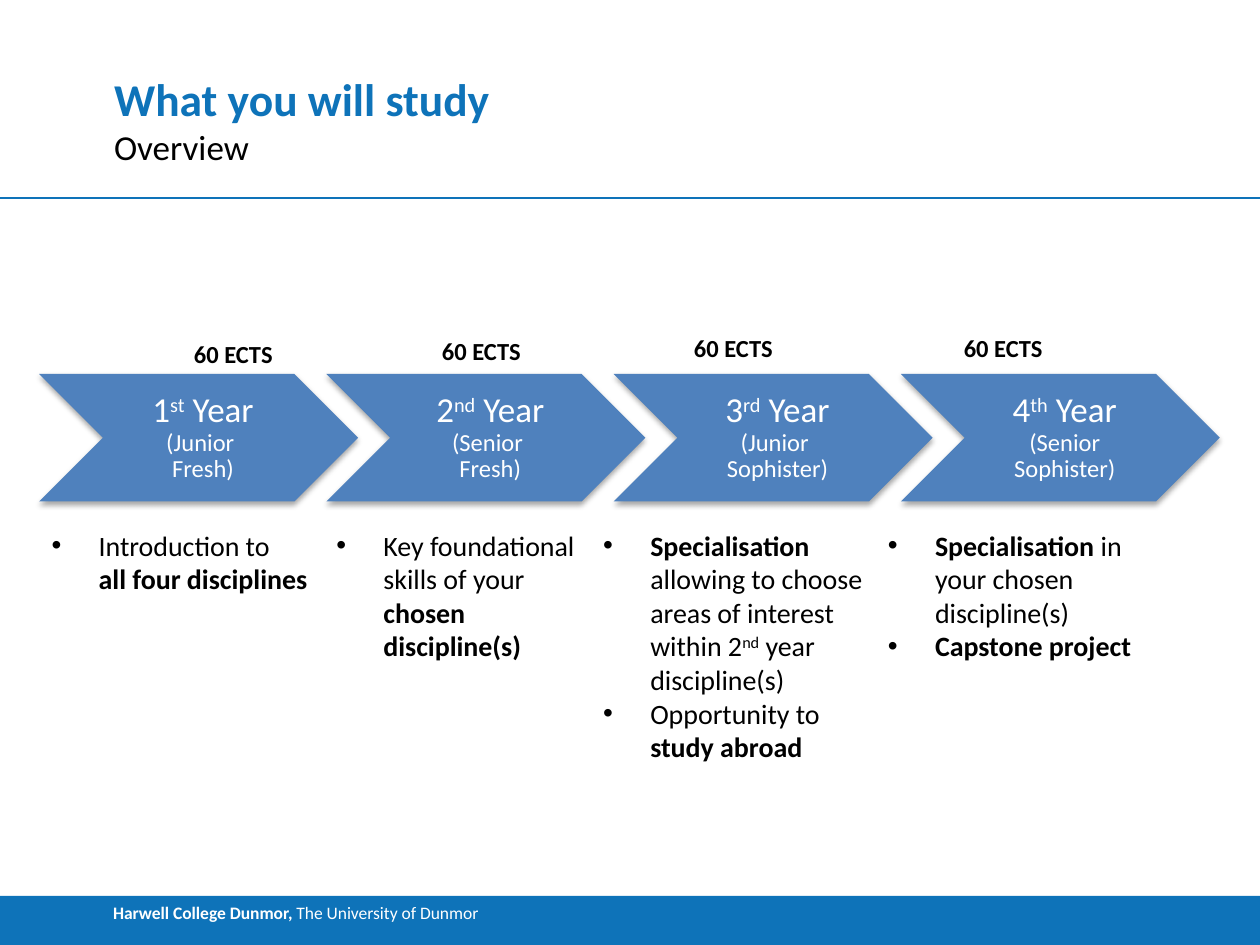
from copy import deepcopy
from lxml import etree
from pptx import Presentation
from pptx.dml.color import RGBColor
from pptx.enum.shapes import MSO_CONNECTOR, MSO_SHAPE
from pptx.enum.text import MSO_ANCHOR, PP_ALIGN
from pptx.oxml.ns import qn
from pptx.util import Cm, Pt

BLUE = RGBColor(0x0E, 0x73, 0xB9)
STEEL = RGBColor(0x4F, 0x81, 0xBD)
WHITE = RGBColor(0xFF, 0xFF, 0xFF)
BLACK = RGBColor(0, 0, 0)
RECT, CHEVRON = MSO_SHAPE.RECTANGLE, MSO_SHAPE.CHEVRON
STRAIGHT = MSO_CONNECTOR.STRAIGHT
TOP, MIDDLE, BOTTOM = MSO_ANCHOR.TOP, MSO_ANCHOR.MIDDLE, MSO_ANCHOR.BOTTOM
LEFT, CENTER = PP_ALIGN.LEFT, PP_ALIGN.CENTER

deck = Presentation()
deck.slide_width, deck.slide_height = Cm(25.4), Cm(19.05)
slide = deck.slides.add_slide(deck.slide_layouts[6])
shapes = slide.shapes


def add_box(left, top, width, height, anchor=TOP, pads=(0, 0, 0, 0)):
    """Add a wrapping text box, pads in cm: left, top, right, bottom."""
    frame = shapes.add_textbox(Cm(left), Cm(top), Cm(width), Cm(height)).text_frame
    frame.word_wrap = True
    frame.vertical_anchor = anchor
    frame.margin_left, frame.margin_top, frame.margin_right, frame.margin_bottom = map(Cm, pads)
    return frame


def write(para, parts, color=BLACK):
    """Write (text, size, style) parts; style b is bold, ^ raised, / ends the line."""
    for text, size, style in parts:
        run = para.add_run()
        run.text = text
        font = run.font
        font.name, font.size, font.bold = "Calibri", Pt(size), "b" in style
        font.color.rgb = color
        if "^" in style:
            font._element.set("baseline", "30000")
        if "/" in style:
            para._p.add_br().append(deepcopy(font._element))


# Footer band
band = shapes.add_shape(RECT, 0, Cm(18.06), Cm(25.4), Cm(0.99))
band.shadow.inherit = False
band.fill.solid()
band.fill.fore_color.rgb = BLUE
band.line.fill.background()
band.text_frame.vertical_anchor = TOP
band.text_frame.margin_left = Cm(2.28)
para = band.text_frame.paragraphs[0]
para.alignment = LEFT
write(para, [("Harwell College Dunmor, ", 10, "b"), ("The University of Dunmor", 10, "")], WHITE)

# Header
rule = shapes.add_connector(STRAIGHT, 0, Cm(3.99), Cm(25.4), Cm(3.99))
rule.line.color.rgb = BLUE
rule.line.width = Pt(0.75)
etree.SubElement(rule._element.spPr, qn("a:effectLst"))
write(add_box(2.3, 1, 20.83, 1.54, BOTTOM).paragraphs[0], [("What you will study", 26, "b")], BLUE)
write(add_box(2.3, 2.54, 20.83, 0.76).paragraphs[0], [("Overview", 20, "")])

# Year chevrons
YEARS = [
    ("1", "st", [("(Junior ", 14, "/"), ("Fresh)", 14, "")]),
    ("2", "nd", [("(Senior ", 14, "/"), ("Fresh)", 14, "")]),
    ("3", "rd", [("(Junior ", 14, "/"), ("Sophister)", 14, "")]),
    ("4", "th", [("(Senior Sophister)", 14, "")]),
]
for i, (num, suffix, stage) in enumerate(YEARS):
    left = 0.79 + 5.79 * i
    arrow = shapes.add_shape(CHEVRON, Cm(left), Cm(7.54), Cm(6.43), Cm(2.57))
    arrow.fill.solid()
    arrow.fill.fore_color.rgb = STEEL
    arrow.line.fill.background()
    arrow.shadow.inherit = False
    effects = arrow._element.spPr.find(qn("a:effectLst"))
    shade = etree.SubElement(effects, qn("a:outerShdw"), blurRad="40000", dist="23000",
                             dir="5400000", rotWithShape="0")
    tint = etree.SubElement(shade, qn("a:srgbClr"), val="000000")
    etree.SubElement(tint, qn("a:alpha"), val="35000")

    frame = add_box(left + 1.3, 7.54, 3.86, 2.57, MIDDLE, (0.23, 0.08, 0.08, 0.08))
    para = frame.paragraphs[0]
    para.alignment, para.line_spacing = CENTER, 0.9
    write(para, [(num, 20, ""), (suffix, 20, "^"), (" Year", 20, "/")] + stage, WHITE)

# Bullets under each year
NOTES = [
    (0.79, 1.63, [[("Introduction to ", 16, "/"), ("all four disciplines", 16, "b")]]),
    (6.53, 3, [[("Key foundational skills of your ", 16, ""),
                ("chosen discipline(s)", 16, "b")]]),
    (11.91, 5.05, [[("Specialisation", 16, "b"),
                    (" allowing to choose areas of interest within 2", 16, ""),
                    ("nd", 16, "^"), (" year discipline(s)", 16, "")],
                   [("Opportunity to ", 16, ""), ("study abroad", 16, "b")]]),
    (17.65, 3, [[("Specialisation", 16, "b"), (" in your chosen discipline(s)", 16, "")],
                [("Capstone project", 16, "b")]]),
]
for left, height, items in NOTES:
    frame = add_box(left, 10.52, 5.77, height, TOP, (0.25, 0.13, 0.25, 0.13))
    for i, parts in enumerate(items):
        para = frame.add_paragraph() if i else frame.paragraphs[0]
        props = para._p.get_or_add_pPr()
        props.set("marL", str(Cm(0.95)))
        props.set("indent", str(-Cm(0.95)))
        etree.SubElement(props, qn("a:buFont"), typeface="Arial")
        etree.SubElement(props, qn("a:buChar"), char="•")
        write(para, parts)

# Credit labels
for left, top in [(3.66, 6.71), (8.66, 6.65), (13.74, 6.58), (19.18, 6.58)]:
    frame = add_box(left, top, 2.11, 0.86, TOP, (0.25, 0.13, 0.25, 0.13))
    frame.word_wrap = False
    write(frame.paragraphs[0], [("60 ECTS", 14, "b")])

deck.save("out.pptx")
